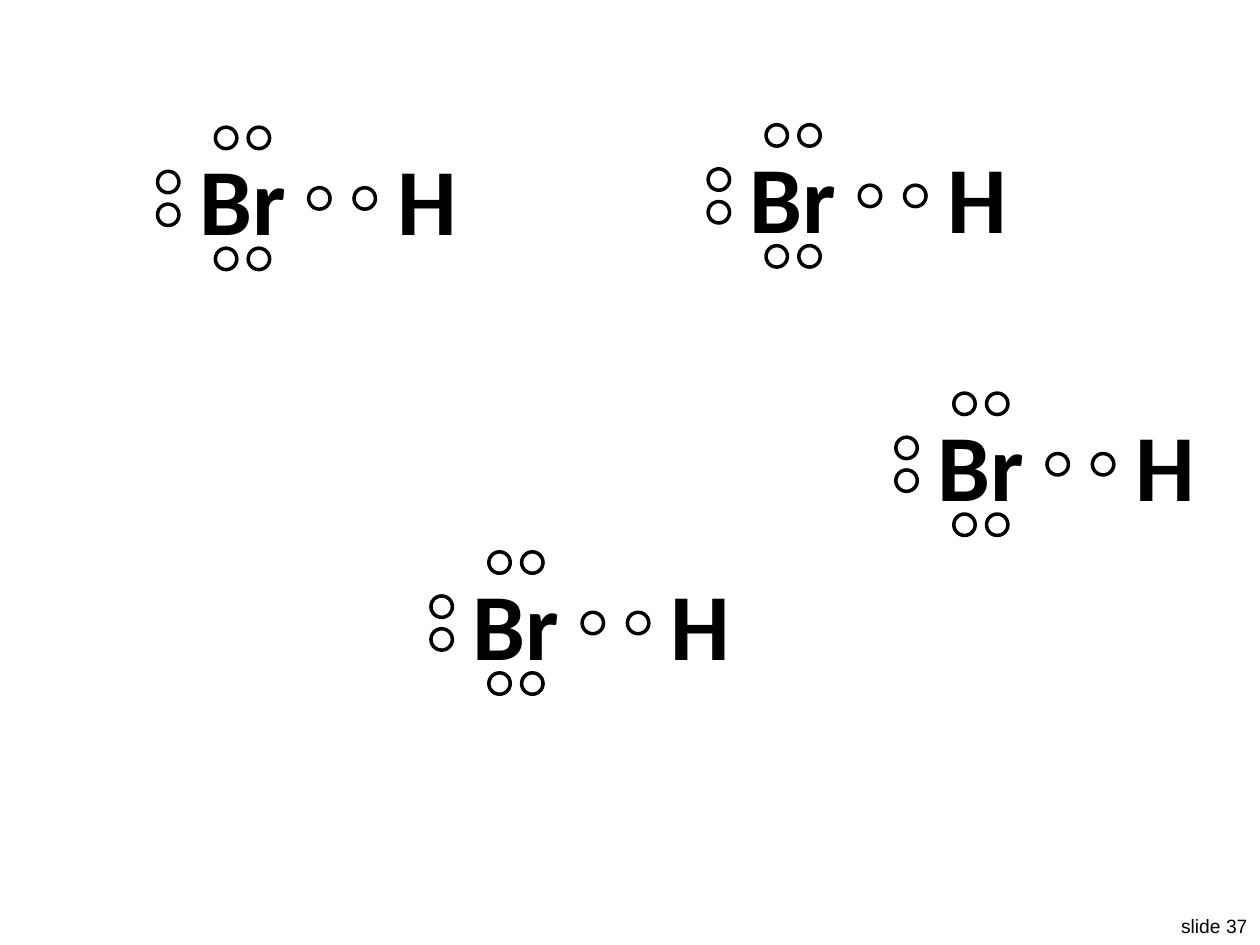
from dataclasses import dataclass

from pptx import Presentation
from pptx import util as u
from pptx.dml.color import RGBColor
from pptx.enum import shapes, text


@dataclass(frozen=True)
class Theme:
    ink: RGBColor = RGBColor(0, 0, 0)
    symbol_font: str = "Calibri"
    symbol_size: float = 54
    footer_font: str = "Arial"
    footer_size: float = 11
    outline: float = 2
    dot: float = 0.17


THEME = Theme()

# Top left corner of each molecule, in inches
MOLECULES = [(3.42, 4.38), (1.25, 1.01), (5.62, 0.99), (7.11, 3.12)]

# Parts of one molecule, measured from its corner
SYMBOL_TOP, SYMBOL_HEIGHT = 0.11, 0.91
SYMBOLS = [("H", 1.9, 0.48), ("Br", 0.33, 0.69)]
BOND_PAIR = [(x, 0.48) for x in (1.2, 1.56)]
LONE_PAIRS = [(x, y) for y in (0.96, 0) for x in (0.46, 0.72)]
SIDE_PAIR = [(0, y) for y in (0.35, 0.61)]


def add_text(parent, words, place, font, size, align, bold=False, inset=None):
    box = parent.add_textbox(*map(u.Inches, place))
    frame = box.text_frame
    frame.text = words
    frame.word_wrap = False
    frame.auto_size = text.MSO_AUTO_SIZE.SHAPE_TO_FIT_TEXT
    if inset is not None:
        frame.margin_left = frame.margin_right = inset
        frame.margin_top = frame.margin_bottom = inset
    para = frame.paragraphs[0]
    para.alignment = align
    span = para.runs[0].font
    span.name, span.size, span.bold = font, u.Pt(size), bold
    span.color.rgb = THEME.ink


def add_electron(group, left, top, turn=0):
    size = u.Inches(THEME.dot)
    dot = group.shapes.add_shape(
        shapes.MSO_SHAPE.OVAL, u.Inches(left), u.Inches(top), size, size)
    dot.rotation = turn
    dot.shadow.inherit = False
    dot.fill.background()
    dot.line.color.rgb = THEME.ink
    dot.line.width = u.Pt(THEME.outline)


def add_molecule(page, left, top):
    group = page.shapes.add_group_shape()
    for symbol, x, width in SYMBOLS:
        place = (left + x, top + SYMBOL_TOP, width, SYMBOL_HEIGHT)
        add_text(group.shapes, symbol, place, THEME.symbol_font,
                 THEME.symbol_size, text.PP_ALIGN.CENTER, bold=True, inset=0)
    for x, y in BOND_PAIR + LONE_PAIRS:
        add_electron(group, left + x, top + y)
    for x, y in SIDE_PAIR:
        add_electron(group, left + x, top + y, turn=90)


def main():
    deck = Presentation()
    deck.slide_width, deck.slide_height = u.Inches(10), u.Inches(7.5)
    page = deck.slides.add_slide(deck.slide_layouts[6])

    # Slide number
    add_text(page.shapes, "slide 37", (9.25, 7.21, 0.75, 0.29),
             THEME.footer_font, THEME.footer_size, text.PP_ALIGN.RIGHT)

    # Electron dot diagrams
    for left, top in MOLECULES:
        add_molecule(page, left, top)

    deck.save("out.pptx")


if __name__ == "__main__":
    main()
